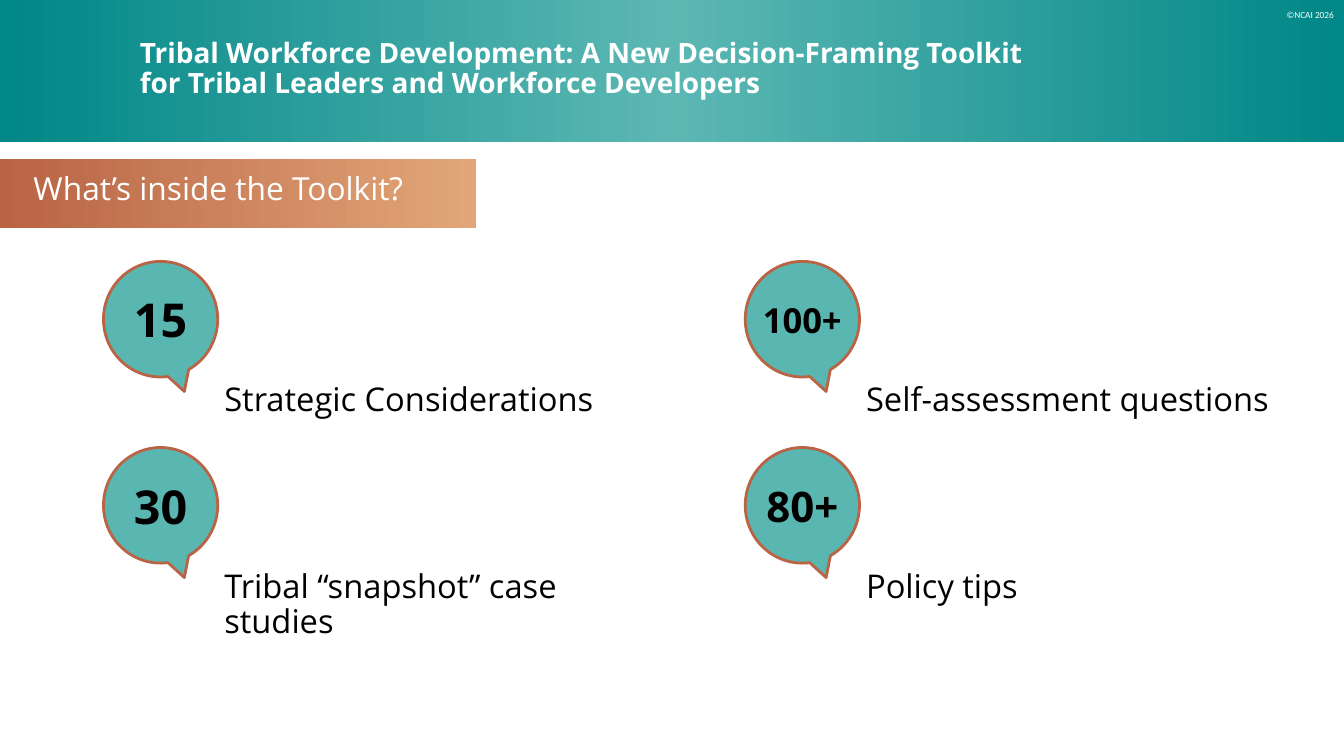
from copy import deepcopy

from pptx import Presentation
from pptx import util as u
from pptx.dml.color import RGBColor
from pptx.enum import shapes, text
from pptx.oxml.ns import qn

TEAL, LIGHT_TEAL, RUST, SAND = "008787", "5CB7B3", "B96445", "E2A678"
BUBBLE, WHITE, BLACK = "5AB6B1", "FFFFFF", "000000"
LEFT, CENTER, RIGHT = text.PP_ALIGN.LEFT, text.PP_ALIGN.CENTER, text.PP_ALIGN.RIGHT


def color(hex_value):
    return RGBColor.from_string(hex_value)


def inches(box):
    return [u.Inches(v) for v in box]


def write(sp, lines, size, hex_value, bold=False, align=LEFT, name="Open Sans",
          inset=(0.1, 0.1), anchor=text.MSO_ANCHOR.TOP, spacing=0.9):
    tf = sp.text_frame
    dx, dy = inches(inset)
    frame = {"word_wrap": True, "auto_size": text.MSO_AUTO_SIZE.NONE,
             "vertical_anchor": anchor, "margin_left": dx, "margin_right": dx,
             "margin_top": dy, "margin_bottom": dy}
    for key, value in frame.items():
        setattr(tf, key, value)
    font = {"name": name, "size": u.Pt(size), "bold": bold}
    for i, line in enumerate(lines):
        p = tf.paragraphs[0] if i == 0 else tf.add_paragraph()
        p.alignment, p.line_spacing = align, spacing
        r = p.add_run()
        r.text = line
        for key, value in font.items():
            setattr(r.font, key, value)
        r.font.color.rgb = color(hex_value)


def add_band(s, box, colors):
    sp = s.shapes.add_shape(shapes.MSO_SHAPE.RECTANGLE, *inches(box))
    sp.shadow.inherit = False
    sp.line.fill.background()
    sp.fill.gradient()
    sp.fill.gradient_angle = 0
    stop_list = sp.element.find(".//" + qn("a:gsLst"))
    while len(stop_list) < len(colors):
        stop_list.append(deepcopy(stop_list[0]))
    for i, (stop, hex_value) in enumerate(zip(sp.fill.gradient_stops, colors)):
        stop.position = i / (len(colors) - 1)
        stop.color.rgb = color(hex_value)


def add_header(s, box):
    x, y, w, h = box
    add_band(s, box, [TEAL, LIGHT_TEAL, TEAL])
    title = s.shapes.title
    s.shapes.element.append(title.element)
    title.left, title.top, title.width, title.height = inches((x + 1.98, y + 0.53, 16.96, 1.11))
    write(title, ["Tribal Workforce Development: A New Decision-Framing Toolkit",
                  "for Tribal Leaders and Workforce Developers"],
          30, WHITE, bold=True, inset=(0.1, 0.05))
    sp = s.shapes.add_textbox(*inches((x + w - 1.29, y + 0.1, 1.21, 0.24)))
    write(sp, ["©NCAI 2026"], 10, WHITE, align=RIGHT, name="Calibri",
          inset=(0.07, 0.04), spacing=1.0)


def add_subtitle(s, box):
    x, y, w, h = box
    add_band(s, box, [RUST, SAND])
    sp = s.shapes.add_textbox(*inches((x + 0.4, y + 0.17, 6.11, 0.71)))
    write(sp, ["What’s inside the Toolkit?"], 34, WHITE, inset=(0.1, 0.05))


def add_item(s, box, number, size, label):
    x, y, w, h = box
    bubble_w, bubble_h = 1.7, 1.72
    sp = s.shapes.add_shape(shapes.MSO_SHAPE.OVAL_CALLOUT, *inches((x, y, bubble_w, bubble_h)))
    sp.adjustments[0], sp.adjustments[1] = 0.208, 0.625
    sp.shadow.inherit = False
    sp.fill.solid()
    sp.fill.fore_color.rgb = color(BUBBLE)
    sp.line.color.rgb = color(RUST)
    sp.line.width = u.Pt(3)
    write(sp, [number], size, BLACK, bold=True, align=CENTER, inset=(0, 0),
          anchor=text.MSO_ANCHOR.MIDDLE, spacing=1.0)
    sp = s.shapes.add_textbox(*inches((x + bubble_w, y + bubble_h, w - bubble_w, h - bubble_h)))
    write(sp, [label], 35, BLACK)


def add_items(s, box):
    x, y, w, h = box
    column_step, row_step = 9.55, 2.77
    items = [("15", 50, "Strategic Considerations"),
             ("100+", 37, "Self-assessment questions"),
             ("30", 50, "Tribal “snapshot” case studies"),
             ("80+", 45, "Policy tips")]
    for i, item in enumerate(items):
        row, column = divmod(i, 2)
        cell = (x + column * column_step, y + row * row_step, w - column_step, h - row_step)
        add_item(s, cell, *item)


def main():
    prs = Presentation()
    prs.slide_width, prs.slide_height = u.Inches(20), u.Inches(11.25)
    s = prs.slides.add_slide(prs.slide_layouts[5])
    add_header(s, (0, 0, 20, 2.12))
    add_subtitle(s, (0, 2.36, 7.08, 1.04))
    add_items(s, (1.54, 3.89, 18.01, 5.87))
    prs.save("out.pptx")


if __name__ == "__main__":
    main()
